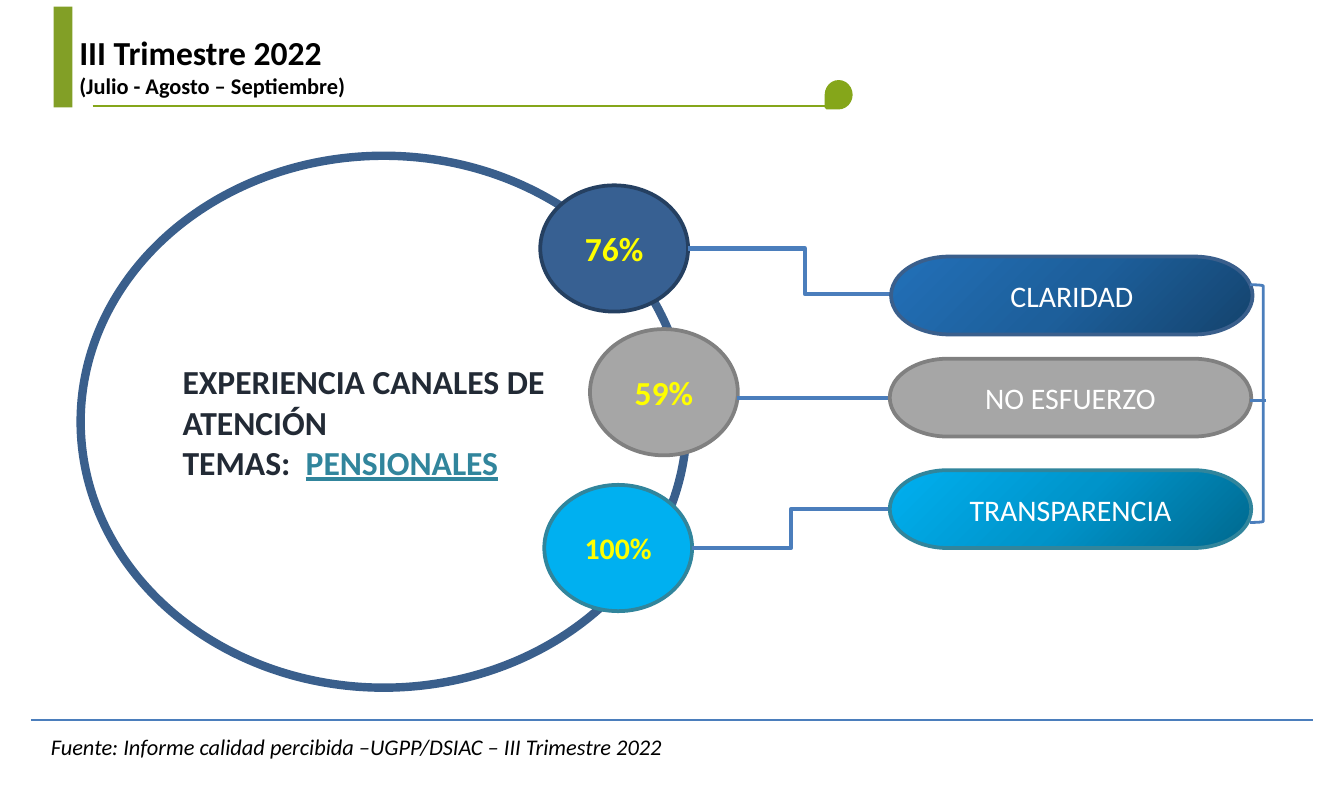
from lxml import etree
from pptx import Presentation
from pptx.dml.color import RGBColor
from pptx.enum import shapes, text
from pptx.oxml import parse_xml
from pptx.util import Inches, Pt

NS = "http://schemas.openxmlformats.org/drawingml/2006/main"
COLORS = {
    "green": "829F26", "lime": "85A61A", "white": "FFFFFF", "black": "000000",
    "ring": "3A5F8C", "navy": "376092", "navy_edge": "254061",
    "gray": "A6A6A6", "gray_edge": "808080", "cyan": "00B0F0", "teal": "31859C",
    "link": "4B7EBC", "ink": "222A35", "yellow": "FFFF00", "orange": "E46C0A",
}
RGB = {name: RGBColor.from_string(value) for name, value in COLORS.items()}
GEOMETRY = shapes.MSO_SHAPE
LINK = shapes.MSO_CONNECTOR

prs = Presentation()
prs.slide_width = Inches(10)
prs.slide_height = Inches(5.8663)
slide = prs.slides.add_slide(prs.slide_layouts[5])


def add_part(geometry, box, fill=None, edge=None, width=2):
    part = slide.shapes.add_shape(geometry, *map(Inches, box))
    part.shadow.inherit = False
    if fill:
        part.fill.solid()
        part.fill.fore_color.rgb = RGB[fill]
    else:
        part.fill.background()
    if edge:
        part.line.color.rgb = RGB[edge]
        part.line.width = Pt(width)
    else:
        part.line.fill.background()
    part.text_frame.vertical_anchor = text.MSO_ANCHOR.MIDDLE
    return part


def write(paragraph, words, size, color, align=text.PP_ALIGN.LEFT, **extra):
    paragraph.alignment = align
    run = paragraph.add_run()
    run.text = words
    font_format = {"name": "Calibri", "size": Pt(size), **extra}
    for attribute, value in font_format.items():
        setattr(run.font, attribute, value)
    run.font.color.rgb = RGB[color]
    return run


# Heading
add_part(GEOMETRY.RECTANGLE, (0.4, 0.05, 0.14, 0.75), "green")
title = slide.shapes.title
title.left, title.top, title.width, title.height = map(Inches, (0.46, 0.19, 6.22, 0.6))
heading = title.text_frame
frame_format = {
    "margin_left": Inches(0.13), "margin_right": Inches(0.09),
    "margin_top": Inches(0.05), "margin_bottom": Inches(0.05),
    "vertical_anchor": text.MSO_ANCHOR.TOP, "word_wrap": True,
    "auto_size": text.MSO_AUTO_SIZE.NONE,
}
for attribute, value in frame_format.items():
    setattr(heading, attribute, value)
write(heading.paragraphs[0], "III Trimestre 2022", 18, "black", bold=True)
write(heading.add_paragraph(), "(Julio - Agosto – Septiembre)", 12, "black", bold=True)

# Main ring
ring = add_part(GEOMETRY.FLOWCHART_CONNECTOR, (0.6, 1.16, 4.51, 3.96), "white", "ring", 4.5)
topic = ring.text_frame
write(topic.paragraphs[0], "EXPERIENCIA CANALES DE ATENCIÓN", 18, "ink", bold=True)
theme = topic.add_paragraph()
write(theme, "TEMAS:  ", 18, "ink", bold=True)
write(theme, "PENSIONALES", 18, "teal", bold=True, underline=True)

# Each score: percentage, size, left, top, fill, edge;
# its label: words, left, top, edge, gradient stops; link kind and ends
scores = [
    ("76%", 18, 4.02, 1.38, "navy", "navy_edge",
     "CLARIDAD", 6.63, 1.91, "ring", ("14436D", "1D5F9B", "2270B8"),
     LINK.ELBOW, (5.12, 1.85, 6.86, 2.19)),
    ("59%", 18, 4.39, 2.45, "gray", "gray_edge",
     "NO ESFUERZO", 6.62, 2.67, "gray_edge", None,
     LINK.STRAIGHT, (5.48, 2.96, 6.62, 2.96)),
    ("100%", 16, 4.05, 3.61, "cyan", "teal",
     "TRANSPARENCIA", 6.62, 3.5, "teal", ("00688E", "0094CA", "00B0F0"),
     LINK.ELBOW, (5.15, 4.08, 6.62, 3.79)),
]
links = []
for (percent, size, left, top, fill, edge,
     label, pill_left, pill_top, pill_edge, stops, kind, ends) in scores:
    bubble = add_part(GEOMETRY.FLOWCHART_CONNECTOR, (left, top, 1.1, 0.94), fill, edge)
    value = write(bubble.text_frame.paragraphs[0], percent, size, "yellow",
                  text.PP_ALIGN.CENTER, bold=True)
    value._r.get_or_add_rPr().insert(0, parse_xml(
        f'<a:ln xmlns:a="{NS}" w="9525"><a:solidFill>'
        f'<a:srgbClr val="{COLORS["orange"]}"/></a:solidFill></a:ln>'))

    link = slide.shapes.add_connector(kind, *map(Inches, ends))
    links.append((link, "link", 2.25))

    pill = add_part(GEOMETRY.FLOWCHART_TERMINATOR, (pill_left, pill_top, 2.69, 0.58),
                    None if stops else fill, pill_edge)
    if stops:
        stop_xml = "".join(f'<a:gs pos="{i * 50000}"><a:srgbClr val="{color}"/></a:gs>'
                           for i, color in enumerate(stops))
        no_fill = pill._element.spPr.find(f"{{{NS}}}noFill")
        pill._element.spPr.replace(no_fill, parse_xml(
            f'<a:gradFill xmlns:a="{NS}" rotWithShape="1"><a:gsLst>{stop_xml}</a:gsLst>'
            '<a:path path="circle"><a:fillToRect l="100000" t="100000"/></a:path></a:gradFill>'))
    write(pill.text_frame.paragraphs[0], label, 16, "white", text.PP_ALIGN.CENTER)
    if kind == LINK.STRAIGHT:
        link.end_connect(pill, 1)

# Bracket grouping the labels
add_part(GEOMETRY.RIGHT_BRACKET, (9.3, 2.12, 0.1, 1.77), None, "link", 1.5)

# Bracket tick, then the rules under the heading and above the source
for ends, color, width in (
    ((9.42, 2.98, 9.3, 2.98), "link", 1.5),
    ((0.69, 0.79, 6.24, 0.79), "lime", 0.75),
    ((0.23, 5.36, 9.77, 5.36), "link", 0.75),
):
    rule = slide.shapes.add_connector(LINK.STRAIGHT, *map(Inches, ends))
    links.append((rule, color, width))
for link, color, width in links:
    link.line.color.rgb = RGB[color]
    link.line.width = Pt(width)
    etree.SubElement(link._element.spPr, f"{{{NS}}}effectLst")

drop = add_part(GEOMETRY.TEAR, (6.15, 0.61, 0.18, 0.19), "lime", "lime")
drop.rotation = 180

source = slide.shapes.add_textbox(*map(Inches, (0.28, 5.41, 6.65, 0.3))).text_frame
source.word_wrap = True
write(source.paragraphs[0], "Fuente: Informe calidad percibida –UGPP/DSIAC – III Trimestre 2022",
      12, "black", italic=True)

prs.save("out.pptx")
